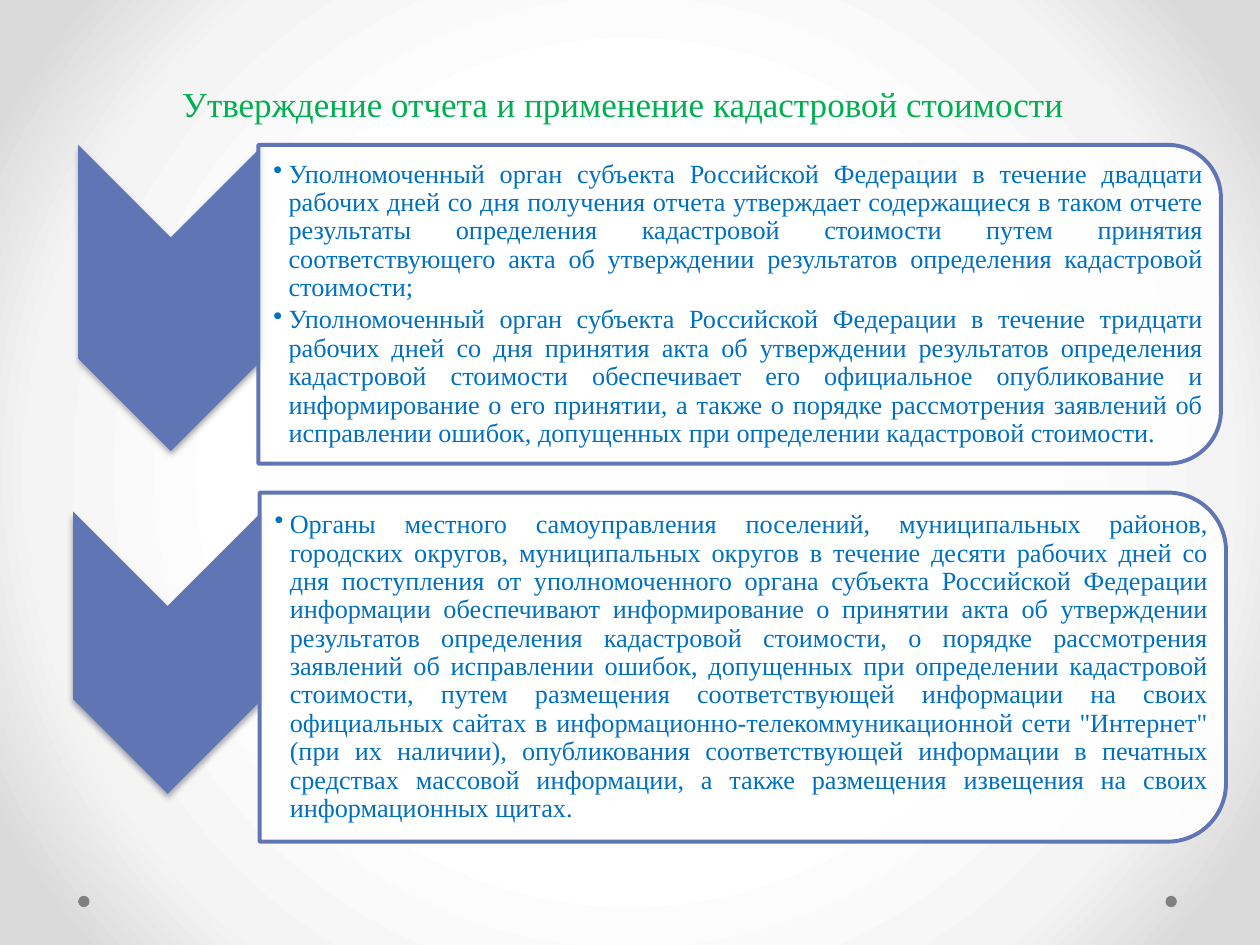
from dataclasses import dataclass

from lxml.etree import SubElement
from pptx import Presentation
from pptx.dml.color import RGBColor
from pptx.enum.shapes import MSO_SHAPE as Preset
from pptx.enum.text import MSO_ANCHOR as Anchor, PP_ALIGN as Align
from pptx.oxml.ns import qn
from pptx.util import Inches, Pt


@dataclass(frozen=True)
class Theme:
    font: str = "Times New Roman"
    title_size: float = 20
    body_size: float = 15
    title: str = "00B050"
    body: str = "0070C0"
    accent: str = "6076B4"
    panel: str = "FFFFFF"
    dot: str = "808080"
    shadow: str = "000000"
    gradient: tuple = ((50, "FFFFFF"), (76, "F4F4F4"), (92, "DADADA"))


THEME = Theme()

TITLE = "Утверждение отчета и применение кадастровой стоимости"
APPROVAL = (
    "Уполномоченный орган субъекта Российской Федерации в течение двадцати рабочих дней "
    "со дня получения отчета утверждает содержащиеся в таком отчете результаты определения "
    "кадастровой стоимости путем принятия соответствующего акта об утверждении результатов "
    "определения кадастровой стоимости;",
    "Уполномоченный орган субъекта Российской Федерации в течение тридцати рабочих дней "
    "со дня принятия акта об утверждении результатов определения кадастровой стоимости "
    "обеспечивает его официальное опубликование и информирование о его принятии, а также "
    "о порядке рассмотрения заявлений об исправлении ошибок, допущенных при определении "
    "кадастровой стоимости.",
)
INFORMING = (
    "Органы местного самоуправления поселений, муниципальных районов, городских округов, "
    "муниципальных округов в течение десяти рабочих дней со дня поступления от "
    "уполномоченного органа субъекта Российской Федерации информации обеспечивают "
    "информирование о принятии акта об утверждении результатов определения кадастровой "
    "стоимости, о порядке рассмотрения заявлений об исправлении ошибок, допущенных при "
    "определении кадастровой стоимости, путем размещения соответствующей информации на "
    "своих официальных сайтах в информационно-телекоммуникационной сети \"Интернет\" "
    "(при их наличии), опубликования соответствующей информации в печатных средствах "
    "массовой информации, а также размещения извещения на своих информационных щитах.",
)


def add_node(parent, tag, **attributes):
    values = {name: str(value) for name, value in attributes.items()}
    return SubElement(parent, qn(tag), values)


def paint_background(slide):
    slide.background.fill.gradient()
    gradient = slide.element.find(".//" + qn("a:gradFill"))
    for child in list(gradient):
        gradient.remove(child)
    stops = add_node(gradient, "a:gsLst")
    for position, color in THEME.gradient:
        stop = add_node(stops, "a:gs", pos=position * 1000)
        add_node(stop, "a:srgbClr", val=color)
    circle = add_node(gradient, "a:path", path="circle")
    add_node(circle, "a:fillToRect", l=50000, t=50000, r=50000, b=50000)


def add_filled_shape(slide, preset, box, color):
    shape = slide.shapes.add_shape(preset, *map(Inches, box))
    shape.shadow.inherit = False
    shape.fill.solid()
    shape.fill.fore_color.rgb = RGBColor.from_string(color)
    shape.line.fill.background()
    return shape


def add_turned_shape(slide, preset, box, color):
    left, top, width, height = box
    shift = (width - height) / 2
    shape = add_filled_shape(slide, preset, (left + shift, top - shift, height, width), color)
    shape.rotation = 90
    return shape


def add_text_frame(slide, box, margins):
    frame = slide.shapes.add_textbox(*map(Inches, box)).text_frame
    frame.word_wrap = True
    frame.vertical_anchor = Anchor.MIDDLE
    frame.margin_left, frame.margin_top, frame.margin_right, frame.margin_bottom = map(Inches, margins)
    return frame


def add_run(paragraph, text, size, color):
    run = paragraph.add_run()
    run.text = text
    run.font.name = THEME.font
    run.font.size = Pt(size)
    run.font.color.rgb = RGBColor.from_string(color)


def add_title(slide, box):
    paragraph = add_text_frame(slide, box, (0.1, 0.05, 0.1, 0.05)).paragraphs[0]
    paragraph.alignment = Align.CENTER
    paragraph.line_spacing = 1.15
    paragraph.space_after = Pt(10)
    add_run(paragraph, TITLE, THEME.title_size, THEME.title)


def add_chevron(slide, box):
    chevron = add_turned_shape(slide, Preset.CHEVRON, box, THEME.accent)
    effects = chevron.element.spPr.find(qn("a:effectLst"))
    shadow = add_node(effects, "a:outerShdw", blurRad=Pt(3.5), dist=Pt(2.2),
                      dir=90 * 60000, rotWithShape=0)
    color = add_node(shadow, "a:srgbClr", val=THEME.shadow)
    add_node(color, "a:alpha", val=32000)


def add_bullet(paragraph, text):
    paragraph.alignment = Align.JUSTIFY
    paragraph.level = 1
    paragraph.line_spacing = 0.9
    add_run(paragraph, text, THEME.body_size, THEME.body)
    properties = paragraph._p.get_or_add_pPr()
    properties.set("marL", str(Inches(0.12)))
    properties.set("indent", str(-Inches(0.12)))
    spacing = add_node(properties, "a:spcAft")
    add_node(spacing, "a:spcPct", val=15000)
    add_node(properties, "a:buChar", char="•")


def add_panel(slide, box, text_height, texts):
    left, top, width, height = box
    panel = add_turned_shape(slide, Preset.ROUND_2_SAME_RECTANGLE, box, THEME.panel)
    color = panel.element.spPr.find(qn("a:solidFill")).find(qn("a:srgbClr"))
    add_node(color, "a:alpha", val=90000)
    panel.line.color.rgb = RGBColor.from_string(THEME.accent)
    panel.line.width = Pt(2.25)
    text_box = (left, top + (height - text_height) / 2, width - 0.13, text_height)
    frame = add_text_frame(slide, text_box, (0.12, 0.01, 0.01, 0.01))
    for index, text in enumerate(texts):
        paragraph = frame.add_paragraph() if index else frame.paragraphs[0]
        add_bullet(paragraph, text)


def add_step(slide, chevron_box, panel_box, text_height, texts):
    add_chevron(slide, chevron_box)
    add_panel(slide, panel_box, text_height, texts)


def add_corner_dots(slide, top):
    for left in (9.25, 0.62):
        add_filled_shape(slide, Preset.OVAL, (left, top, 0.09, 0.09), THEME.dot)


def main():
    presentation = Presentation()
    presentation.slide_width = Inches(10)
    presentation.slide_height = Inches(7.5)
    slide = presentation.slides.add_slide(presentation.slide_layouts[6])
    paint_background(slide)
    add_corner_dots(slide, 7.11)
    add_title(slide, (0.51, 0.44, 8.87, 0.71))
    add_step(slide, (0.58, 4.06, 1.5, 2.24), (2.06, 3.91, 7.67, 2.77), 2.5, INFORMING)
    add_step(slide, (0.62, 1.15, 1.47, 2.43), (2.05, 1.15, 7.64, 2.53), 2.28, APPROVAL)
    presentation.save("out.pptx")


if __name__ == "__main__":
    main()
